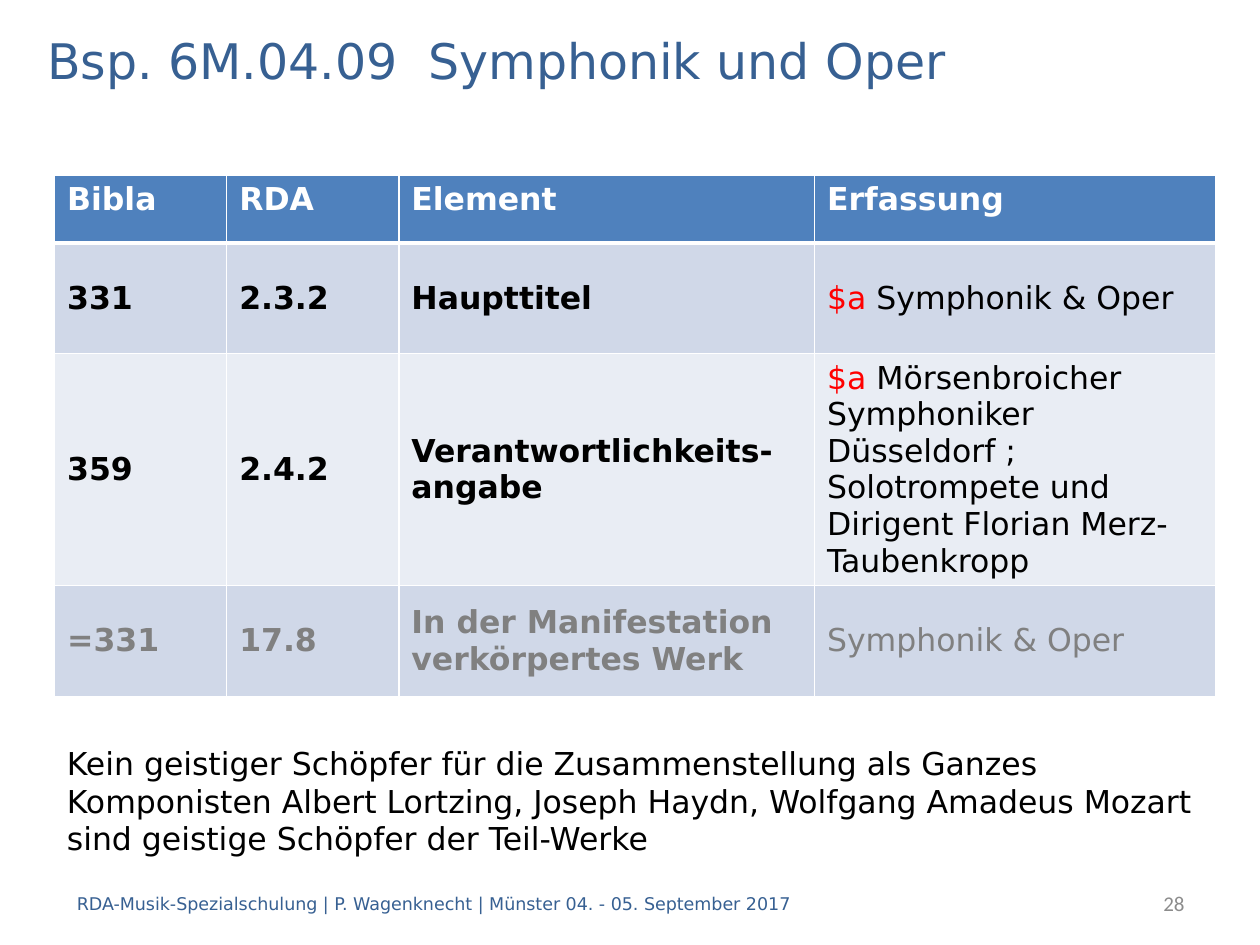
from lxml import etree
from pptx import Presentation
from pptx.dml.color import RGBColor
from pptx.enum.text import MSO_ANCHOR, PP_ALIGN
from pptx.oxml.ns import qn
from pptx.util import Cm, Pt

MIDDLE, TOP = MSO_ANCHOR.MIDDLE, MSO_ANCHOR.TOP
LEFT, RIGHT = PP_ALIGN.LEFT, PP_ALIGN.RIGHT
TITLE_ONLY = 5
FONT = "DejaVu Sans"
BLUE, BLACK, WHITE, GREY, RED = "376092", "000000", "FFFFFF", "808080", "FF0000"
HEADER_FILL, BAND_FILLS = "4F81BD", ("E9EDF4", "D0D8E8")

COLUMN_WIDTHS = (3.47, 3.47, 8.38, 8.08)
ROW_HEIGHTS = (1.37, 2.23, 2.97, 2.23)
MARK = "$a "
ROWS = (
    ("Bibla", "RDA", "Element", "Erfassung"),
    ("331", "2.3.2", "Haupttitel", MARK + "Symphonik & Oper"),
    ("359", "2.4.2", "Verantwortlichkeits-angabe",
     MARK + "Mörsenbroicher Symphoniker Düsseldorf ; Solotrompete und "
     "Dirigent Florian Merz-Taubenkropp"),
    ("=331", "17.8", "In der Manifestation verkörpertes Werk",
     "Symphonik & Oper"),
)
TEXT_COLOURS = (WHITE, BLACK, BLACK, GREY)


def colour(hex_string):
    return RGBColor.from_string(hex_string)


def format_span(span, size, hex_string, bold=False, font=FONT):
    span.font.name = font
    span.font.size = Pt(size)
    span.font.bold = bold
    span.font.color.rgb = colour(hex_string)


def fill_frame(frame, lines, size, hex_string, align=LEFT, font=FONT):
    frame.text = "\n".join(lines)
    frame.word_wrap = True
    frame.vertical_anchor = MIDDLE
    for para in frame.paragraphs:
        para.alignment = align
        for span in para.runs:
            format_span(span, size, hex_string, font=font)


def add_title(page, box, text):
    title = page.shapes.title
    title.left, title.top, title.width, title.height = map(Cm, box)
    fill_frame(title.text_frame, [text], 28, BLUE)


def add_text(page, box, lines, size, hex_string, **options):
    text_box = page.shapes.add_textbox(*map(Cm, box))
    fill_frame(text_box.text_frame, lines, size, hex_string, **options)


def set_borders(cell, bottom_width):
    properties = cell._tc.get_or_add_tcPr()
    for side, width in (("L", 1), ("R", 1), ("T", 1), ("B", bottom_width)):
        line = etree.SubElement(properties, qn("a:ln" + side), w=str(Pt(width)))
        solid = etree.SubElement(line, qn("a:solidFill"))
        etree.SubElement(solid, qn("a:srgbClr"), val=WHITE)


def fill_cell(cell, text, row, column):
    is_header = row == 0
    set_borders(cell, 3 if is_header else 1)
    cell.fill.solid()
    cell.fill.fore_color.rgb = colour(HEADER_FILL if is_header else BAND_FILLS[row % 2])
    cell.vertical_anchor = TOP if is_header else MIDDLE
    para = cell.text_frame.paragraphs[0]
    if not is_header:
        para.space_before = para.space_after = Pt(6)
    bold = is_header or column < len(COLUMN_WIDTHS) - 1
    if text.startswith(MARK):
        para.text = MARK
        format_span(para.runs[0], 18, RED, bold)
        rest = para.add_run()
        rest.text = text[len(MARK):]
    else:
        para.text = text
        rest = para.runs[0]
    format_span(rest, 18, TEXT_COLOURS[row], bold)


def add_record_table(page, left, top):
    table = page.shapes.add_table(
        len(ROWS), len(COLUMN_WIDTHS), Cm(left), Cm(top),
        Cm(sum(COLUMN_WIDTHS)), Cm(sum(ROW_HEIGHTS))).table
    for column, width in zip(table.columns, COLUMN_WIDTHS):
        column.width = Cm(width)
    for row, height in zip(table.rows, ROW_HEIGHTS):
        row.height = Cm(height)
    for row, texts in enumerate(ROWS):
        for column, text in enumerate(texts):
            fill_cell(table.cell(row, column), text, row, column)


def add_footer(page, left, top, width, height):
    number_width = 4.04
    add_text(page, (left, top, width - 0.63, height),
             ["RDA-Musik-Spezialschulung | P. Wagenknecht | "
              "Münster 04. - 05. September 2017"], 10, BLUE)
    add_text(page, (left + width - number_width, top, number_width, height),
             ["28"], 12, "8C8C8C", align=RIGHT, font="Calibri")


def main():
    deck = Presentation()
    deck.slide_width, deck.slide_height = Cm(25.4), Cm(19.05)
    page = deck.slides.add_slide(deck.slide_layouts[TITLE_ONLY])
    add_record_table(page, 1.1, 3.53)
    add_title(page, (0.7, 0.5, 24, 1.42), "Bsp. 6M.04.09  Symphonik und Oper")
    add_text(page, (1.1, 14.73, 24, 2.82),
             ["Kein geistiger Schöpfer für die Zusammenstellung als Ganzes",
              "Komponisten Albert Lortzing, Joseph Haydn, Wolfgang Amadeus "
              "Mozart sind geistige Schöpfer der Teil-Werke"], 18, BLACK)
    add_footer(page, 1.3, 17.7, 22.83, 1.02)
    deck.save("out.pptx")


if __name__ == "__main__":
    main()
